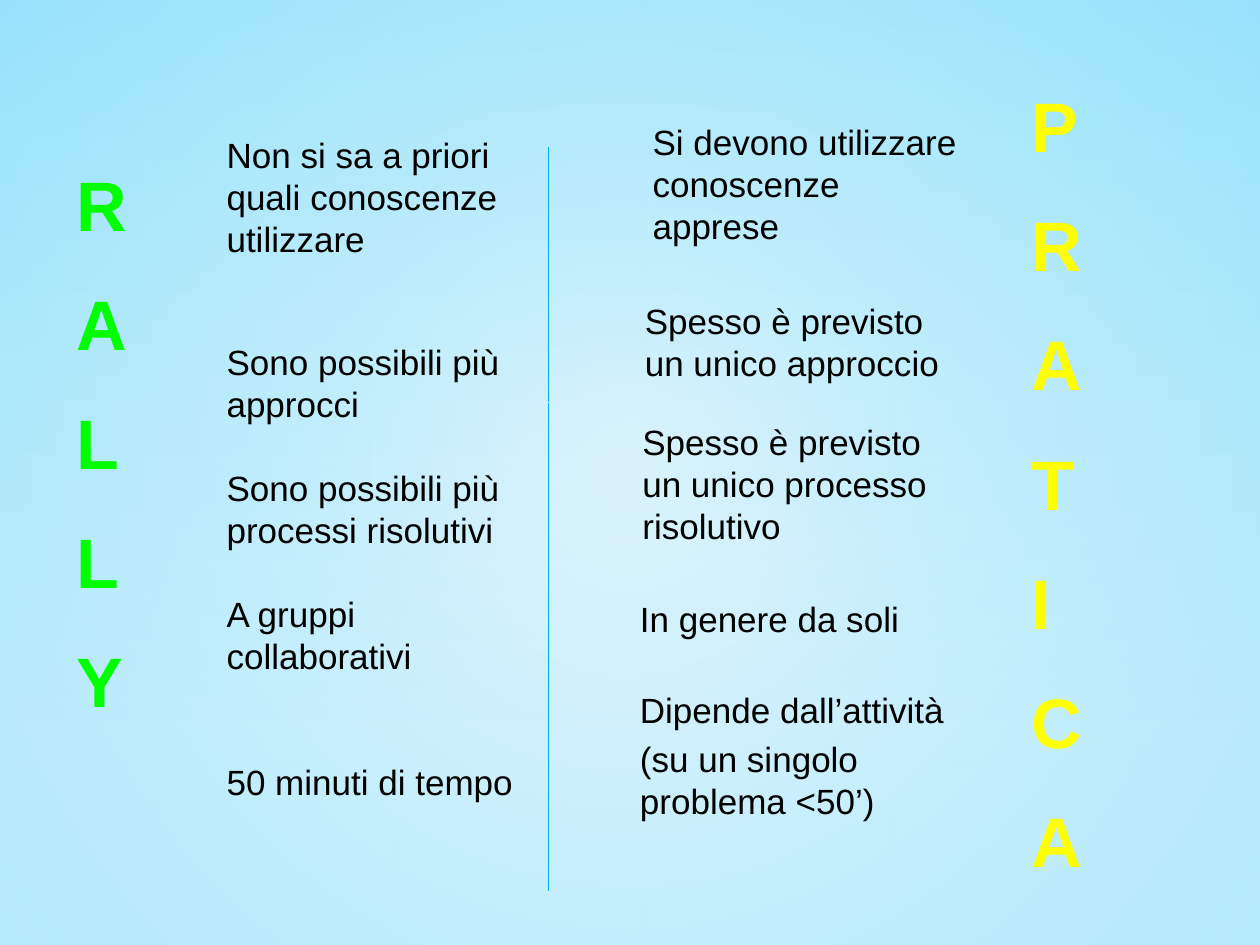
import pptx
import pptx.util
import pptx.dml.color
import pptx.enum.dml
import pptx.enum.shapes
import pptx.enum.text
import lxml.etree
from dataclasses import dataclass

Pt = pptx.util.Pt
RGB = pptx.dml.color.RGBColor.from_string
qn = pptx.oxml.ns.qn


@dataclass(frozen=True)
class Theme:
    font: str = "Arial"
    body_size: int = 20
    letter_size: int = 40
    text: str = "000000"
    rally: str = "00FF00"
    pratica: str = "FFFF00"
    accent: str = "00B0EA"
    sky: str = "C8F1FF"
    edge: str = "91E4FF"
    white: str = "FFFFFF"


theme = Theme()


def set_opacity(color_parent, percent):
    color = color_parent.find(qn("a:srgbClr"))
    lxml.etree.SubElement(color, qn("a:alpha")).set("val", str(percent * 1000))


def add_text(box, paragraphs, size, color, bold=False):
    """Add a text box; each paragraph is (space before, text)."""
    frame = slide.shapes.add_textbox(*map(Pt, box)).text_frame
    frame.word_wrap = True
    frame.auto_size = pptx.enum.text.MSO_AUTO_SIZE.SHAPE_TO_FIT_TEXT
    for index, (space_before, text) in enumerate(paragraphs):
        paragraph = frame.add_paragraph() if index else frame.paragraphs[0]
        paragraph.space_before = Pt(space_before)
        run = paragraph.add_run()
        run.text = text
        run.font.name = theme.font
        run.font.size = Pt(size)
        run.font.bold = bold
        run.font.color.rgb = RGB(color)


deck = pptx.Presentation()
deck.slide_width, deck.slide_height = Pt(720), Pt(540)
slide = deck.slides.add_slide(deck.slide_layouts[6])

# Background: vertical gradient under a blue tint and a radial glow
sky = slide.background.fill
sky.gradient()
sky.gradient_angle = 270
for stop, color, position in zip(sky.gradient_stops, (theme.sky, theme.white), (0, 0.79)):
    stop.color.rgb = RGB(color)
    stop.position = position

tint, glow = [
    slide.shapes.add_shape(pptx.enum.shapes.MSO_SHAPE.RECTANGLE, 0, 0, deck.slide_width, deck.slide_height)
    for _ in range(2)
]
for layer in (tint, glow):
    layer.shadow.inherit = False
    layer.line.fill.background()

tint.fill.solid()
tint.fill.fore_color.rgb = RGB(theme.accent)
set_opacity(tint.fill._xPr.find(qn("a:solidFill")), 22)

glow.fill.gradient()
gradient = glow.fill._xPr.find(qn("a:gradFill"))
for stop, node, color, position, opacity in zip(
    glow.fill.gradient_stops, gradient.iter(qn("a:gs")), (theme.white, theme.edge), (0, 1), (49, 35)
):
    stop.color.rgb = RGB(color)
    stop.position = position
    set_opacity(node, opacity)
linear = gradient.find(qn("a:lin"))
radial = lxml.etree.Element(qn("a:path"), {"path": "circle"})
center = lxml.etree.SubElement(radial, qn("a:fillToRect"))
for side in "ltrb":
    center.set(side, "50000")
gradient.replace(linear, radial)

# Vertical titles
for word, color, box in (
    ("RALLY", theme.rally, (36.7, 88.6, 42.5, 346.3)),
    ("PRATICA", theme.pratica, (582.5, 43.9, 39.6, 491.8)),
):
    add_text(box, [(20, letter) for letter in word], theme.letter_size, color, bold=True)

# Rally features
rally_features = [
    (0, "Non si sa a priori quali conoscenze utilizzare"),
    (46, "Sono possibili più approcci"),
    (24, "Sono possibili più processi risolutivi"),
    (24, "A gruppi collaborativi"),
    (48, "50 minuti di tempo"),
]
add_text((122.4, 72.7, 182.9, 392.4), rally_features, theme.body_size, theme.text)

# Classroom practice features
practice_features = [
    ((365.8, 65.5, 195.8, 104.4), [(0, "Si devono utilizzare conoscenze apprese")]),
    ((361.4, 167.8, 191.5, 55.4), [(4, "Spesso è previsto un unico approccio")]),
    ((360, 236.9, 191.5, 108.7), [(4, "Spesso è previsto un unico processo risolutivo")]),
    (
        (358.6, 337.7, 226.1, 162.7),
        [(0, "In genere da soli"), (28, "Dipende dall’attività"), (4, "(su un singolo problema <50’)")],
    ),
]
for box, paragraphs in practice_features:
    add_text(box, paragraphs, theme.body_size, theme.text)

# Divider between the two columns
for start, end in ((230.4, 509), (229.7, 84.2)):
    divider = slide.shapes.add_connector(
        pptx.enum.shapes.MSO_CONNECTOR.STRAIGHT, Pt(313.2), Pt(start), Pt(313.2), Pt(end)
    )
    divider.line.color.rgb = RGB(theme.accent)
    divider.line.width = Pt(0.5)
    lxml.etree.SubElement(divider._element.spPr, qn("a:effectLst"))

deck.save("out.pptx")
